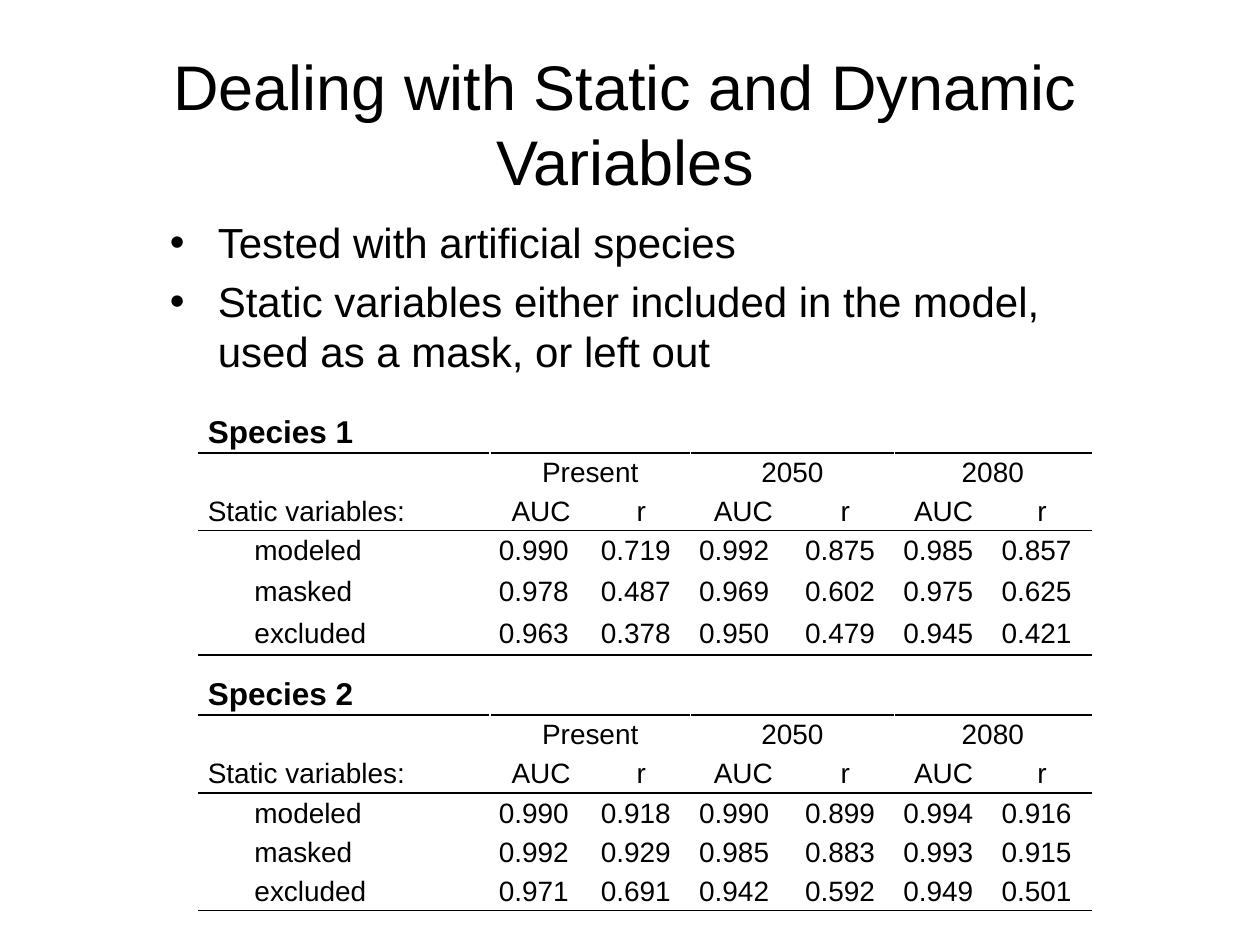
"""Build a slide comparing treatments of static variables for two species."""
from lxml import etree
from pptx import Presentation
from pptx.dml.color import RGBColor
from pptx.enum import text as t
from pptx.oxml import ns
from pptx.util import Inches, Pt

TITLE = "Dealing with Static and Dynamic Variables"
BULLETS = [
    "Tested with artificial species",
    "Static variables either included in the model, used as a mask, or left out",
]
PERIODS = ["Present", "2050", "2080"]
MEASURES = ["AUC", "r"]
COLUMN_WIDTHS = [2.31, 0.81, 0.78, 0.84, 0.78, 0.78, 0.78]
SPECIES = [
    {
        "name": "Species 1",
        "top": 3.25,
        "heights": [0.29, 0.19, 0.19, 0.33, 0.33, 0.33],
        "rows": [
            ["modeled", "0.990", "0.719", "0.992", "0.875", "0.985", "0.857"],
            ["masked", "0.978", "0.487", "0.969", "0.602", "0.975", "0.625"],
            ["excluded", "0.963", "0.378", "0.950", "0.479", "0.945", "0.421"],
        ],
    },
    {
        "name": "Species 2",
        "top": 5.33,
        "heights": [0.31] * 6,
        "rows": [
            ["modeled", "0.990", "0.918", "0.990", "0.899", "0.994", "0.916"],
            ["masked", "0.992", "0.929", "0.985", "0.883", "0.993", "0.915"],
            ["excluded", "0.971", "0.691", "0.942", "0.592", "0.949", "0.501"],
        ],
    },
]
TABLE_LEFT = 1.58
RULED_ROWS = (0, 2, 5)
BLACK = "000000"


def color(value):
    return RGBColor.from_string(value)


def write(paragraph, content, size, bold=False, align=t.PP_ALIGN.LEFT, spacing=None, before=0):
    paragraph.alignment = align
    paragraph.line_spacing = spacing
    paragraph.space_before = Pt(before)
    run = paragraph.add_run()
    run.text = content
    run.font.name = "Arial"
    run.font.size = Pt(size)
    run.font.bold = bold
    run.font.color.rgb = color(BLACK)


def add_text_frame(slide, left, top, width, height, anchor):
    box = slide.shapes.add_textbox(Inches(left), Inches(top), Inches(width), Inches(height))
    frame = box.text_frame
    frame.word_wrap = True
    frame.vertical_anchor = anchor
    return frame


def add_bullets(frame, items):
    for index, item in enumerate(items):
        paragraph = frame.add_paragraph() if index else frame.paragraphs[0]
        write(paragraph, item, 24, before=4.8)
        properties = paragraph._p.get_or_add_pPr()
        properties.set("marL", str(Inches(0.38)))
        properties.set("indent", str(Inches(-0.38)))
        etree.SubElement(properties, ns.qn("a:buFont")).set("typeface", "Arial")
        etree.SubElement(properties, ns.qn("a:buChar")).set("char", "•")


def rule_cell(cell, side):
    line = etree.SubElement(cell._tc.get_or_add_tcPr(), ns.qn(f"a:ln{side}"), w=str(Pt(1)))
    fill = etree.SubElement(line, ns.qn("a:solidFill"))
    etree.SubElement(fill, ns.qn("a:srgbClr")).set("val", BLACK)


def add_species_table(slide, species):
    period_row = [""]
    for period in PERIODS:
        period_row += [period, ""]
    measure_row = ["Static variables:"] + MEASURES * len(PERIODS)
    name_row = [species["name"]] + [""] * (len(COLUMN_WIDTHS) - 1)
    rows = [name_row, period_row, measure_row] + species["rows"]
    heights = species["heights"]
    table = slide.shapes.add_table(
        len(rows), len(COLUMN_WIDTHS), Inches(TABLE_LEFT), Inches(species["top"]),
        Inches(sum(COLUMN_WIDTHS)), Inches(sum(heights)),
    ).table
    table.first_row = table.horz_banding = False
    for column, width in zip(table.columns, COLUMN_WIDTHS):
        column.width = Inches(width)
    for row, height in zip(table.rows, heights):
        row.height = Inches(height)

    for r, values in enumerate(rows):
        for c, value in enumerate(values):
            cell = table.cell(r, c)
            cell.margin_left = Inches(0.44 if r > 2 and c == 0 else 0.07)
            cell.margin_right = Inches(0.07)
            cell.margin_top = cell.margin_bottom = 0
            centered = r in (1, 2) and c > 0
            write(cell.text_frame.paragraphs[0], value, 16 if r else 18, bold=r == 0, spacing=1.15,
                  align=t.PP_ALIGN.CENTER if centered else t.PP_ALIGN.LEFT)
            if r - 1 in RULED_ROWS:
                rule_cell(cell, "T")
            if r in RULED_ROWS:
                rule_cell(cell, "B")
            cell.fill.background()

    table.cell(0, 0).merge(table.cell(0, len(COLUMN_WIDTHS) - 1))
    for c in range(1, len(COLUMN_WIDTHS), len(MEASURES)):
        table.cell(1, c).merge(table.cell(1, c + 1))


def main():
    presentation = Presentation()
    presentation.slide_width, presentation.slide_height = Inches(10), Inches(7.5)
    slide = presentation.slides.add_slide(presentation.slide_layouts[6])
    title = add_text_frame(slide, 0.92, 0, 8.08, 1.95, t.MSO_ANCHOR.MIDDLE)
    write(title.paragraphs[0], TITLE, 36, align=t.PP_ALIGN.CENTER)
    add_bullets(add_text_frame(slide, 1.25, 1.67, 7.75, 2, t.MSO_ANCHOR.TOP), BULLETS)
    for species in SPECIES:
        add_species_table(slide, species)
    presentation.save("out.pptx")


if __name__ == "__main__":
    main()
